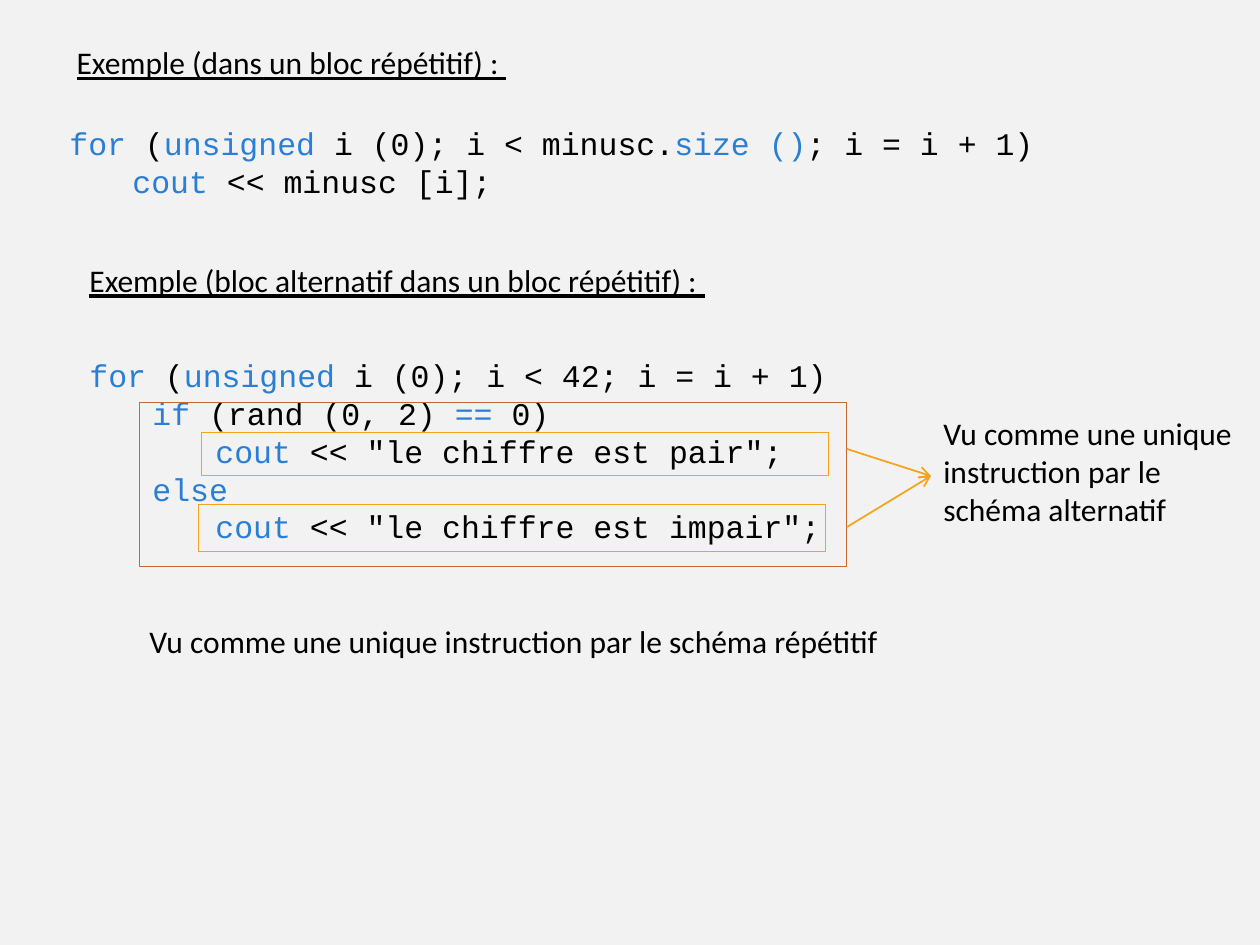
from lxml.etree import SubElement
from pptx import Presentation
from pptx.dml.color import RGBColor
from pptx.enum.shapes import MSO_CONNECTOR as Connector, MSO_SHAPE as Shape
from pptx.enum.text import MSO_ANCHOR as Anchor, MSO_AUTO_SIZE as AutoSize, PP_ALIGN as Align
from pptx.oxml.ns import qn
from pptx.util import Emu, Pt

PX = 914400 // 126
INDENT = 63
BLACK, BLUE, ORANGE, RUST = "000000", "297FD5", "F6A21D", "C96731"
TEXT_FONT, CODE_FONT = "Calibri", "Courier New"

TITLE = ("Exemple (dans un bloc répétitif) : ", (64, 37, 1002, 50))
SUBTITLE = ("Exemple (bloc alternatif dans un bloc répétitif) : ", (77, 255, 1002, 50))
NOTES = [
    ("Vu comme une unique instruction par le schéma alternatif", (931, 408, 314, 165)),
    ("Vu comme une unique instruction par le schéma répétitif", (137, 616, 869, 50)),
]
# Each code line: indent level, then (text, colour) pieces
CODE_BLOCKS = [
    ((57, 118, 1003, 89), [
        (0, [("for", BLUE), (" (", BLACK), ("unsigned ", BLUE), ("i (0); i < minusc.", BLACK),
             ("size ()", BLUE), ("; i = i + 1)", BLACK)]),
        (1, [("cout", BLUE), (" << minusc [i];", BLACK)]),
    ]),
    ((77, 350, 1003, 204), [
        (0, [("for", BLUE), (" (", BLACK), ("unsigned ", BLUE),
             ("i (0); i < 42; i = i + 1)", BLACK)]),
        (1, [("if", BLUE), (" (rand (0, 2) ", BLACK), ("==", BLUE), (" 0)", BLACK)]),
        (2, [("cout", BLUE), (' << "le chiffre est pair";', BLACK)]),
        (1, [("else", BLUE)]),
        (2, [("cout", BLUE), (' << "le chiffre est impair";', BLACK)]),
    ]),
]
FRAMES = [
    ((198, 504, 628, 48), ORANGE),
    ((201, 432, 628, 44), ORANGE),
    ((139, 402, 708, 165), RUST),
]
ARROW_STARTS = [(847, 527), (847, 449)]
ARROW_END = (931, 476)


def px(values):
    return [Emu(value * PX) for value in values]


def color(value):
    return RGBColor.from_string(value)


def style_run(run, font, fill, underline=None):
    run.font.name, run.font.size, run.font.underline = font, Pt(18), underline
    run.font.color.rgb = color(fill)


def prepare_frame(shape):
    frame = shape.text_frame
    frame.word_wrap, frame.auto_size = True, AutoSize.NONE
    frame.vertical_anchor = Anchor.TOP
    return frame


def write_text(shape, text, underline=None):
    paragraph = prepare_frame(shape).paragraphs[0]
    paragraph.text, paragraph.alignment = text, Align.LEFT
    style_run(paragraph.runs[0], TEXT_FONT, BLACK, underline)


def add_code(slide, box, lines):
    frame = prepare_frame(slide.shapes.add_textbox(*px(box)))
    for index, (level, pieces) in enumerate(lines):
        paragraph = frame.add_paragraph() if index else frame.paragraphs[0]
        paragraph._p.get_or_add_pPr().set("marL", str(level * INDENT * PX))
        for text, fill in pieces:
            run = paragraph.add_run()
            run.text = text
            style_run(run, CODE_FONT, fill)


def add_frame(slide, box, line_color):
    shape = slide.shapes.add_shape(Shape.RECTANGLE, *px(box))
    shape.shadow.inherit = False
    shape.fill.background()
    shape.line.color.rgb, shape.line.width = color(line_color), Pt(0.5)


def add_arrow(slide, start, end):
    arrow = slide.shapes.add_connector(Connector.STRAIGHT, *px(start + end))
    arrow.line.color.rgb, arrow.line.width = color(ORANGE), Pt(1)
    SubElement(arrow.line._get_or_add_ln(), qn("a:tailEnd"), type="arrow")
    SubElement(arrow._element.spPr, qn("a:effectLst"))


def main():
    presentation = Presentation()
    presentation.slide_width, presentation.slide_height = px((1260, 945))
    slide = presentation.slides.add_slide(presentation.slide_layouts[5])
    slide.background.fill.solid()
    slide.background.fill.fore_color.rgb = color("F2F2F2")

    text, box = TITLE
    title = slide.shapes.title
    title.left, title.top, title.width, title.height = px(box)
    write_text(title, text, underline=True)
    text, box = SUBTITLE
    write_text(slide.shapes.add_textbox(*px(box)), text, underline=True)

    for box, lines in CODE_BLOCKS:
        add_code(slide, box, lines)
    for box, line_color in FRAMES:
        add_frame(slide, box, line_color)
    for start in ARROW_STARTS:
        add_arrow(slide, start, ARROW_END)
    for text, box in NOTES:
        write_text(slide.shapes.add_textbox(*px(box)), text)

    presentation.save("out.pptx")


if __name__ == "__main__":
    main()
